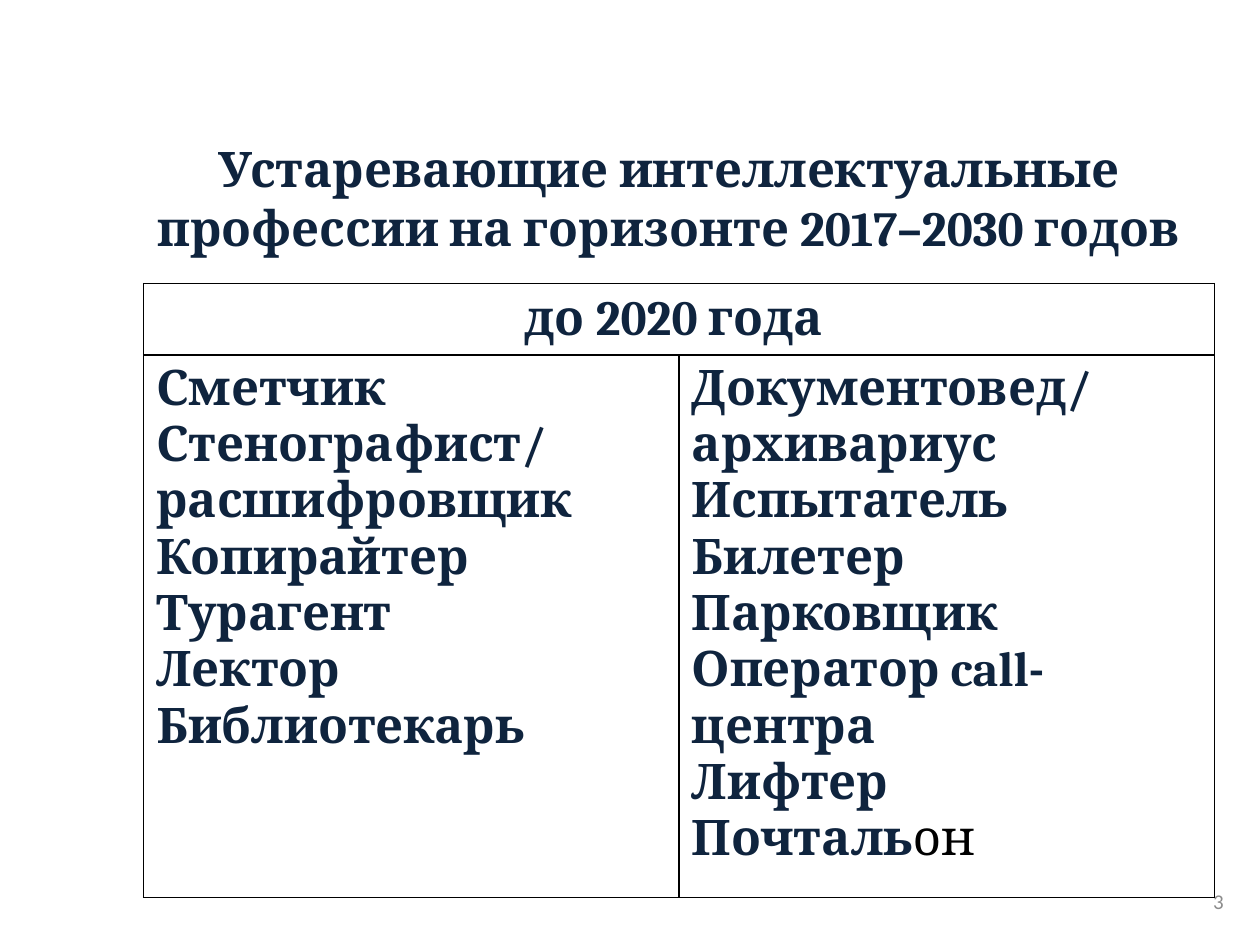
from dataclasses import dataclass

from lxml.etree import SubElement
from pptx import Presentation
from pptx.dml.color import RGBColor
from pptx.enum.text import MSO_ANCHOR, MSO_AUTO_SIZE, PP_ALIGN
from pptx.oxml.ns import qn
from pptx.util import Inches, Pt


@dataclass(frozen=True)
class Theme:
    """Colours, fonts and type sizes of the deck."""
    navy: str = "0F243E"
    black: str = "000000"
    grey: str = "8C8C8C"
    serif: str = "Cambria"
    sans: str = "Calibri"
    body_size: float = 28
    number_size: float = 12
    border: float = 1
    outline: float = 0.75


class SlideBuilder:
    """Holds the theme and the current slide."""

    def __init__(self, deck, theme):
        """Start a title-only slide."""
        self.deck = deck
        self.theme = theme
        self.slide = deck.slides.add_slide(deck.slide_layouts[5])

    def place(self, left, top, width, height):
        """Turn shares of the slide's size into lengths."""
        across, down = self.deck.slide_width, self.deck.slide_height
        return (int(left * across), int(top * down),
                int(width * across), int(height * down))

    def line(self, parent, tag, width, color):
        """Build a solid line element."""
        line = SubElement(parent, qn(tag), w=str(Pt(width)))
        fill = SubElement(line, qn("a:solidFill"))
        SubElement(fill, qn("a:srgbClr"), val=color)
        return line

    def span(self, para, text, color=None, bold=True, font=None, size=None):
        """Add one formatted run."""
        span = para.add_run()
        span.text = text
        span.font.name = font or self.theme.serif
        span.font.size = Pt(size or self.theme.body_size)
        span.font.bold = bold
        span.font.color.rgb = RGBColor.from_string(color or self.theme.navy)
        return span

    def outlined_span(self, para, text):
        """Add a regular black run with a navy outline."""
        span = self.span(para, text, self.theme.black, bold=False)
        properties = span.font._element
        outline = self.line(properties, "a:ln", self.theme.outline, self.theme.navy)
        properties.insert(0, outline)

    def title(self, text, *area):
        """Move and fill the title placeholder."""
        box = self.slide.shapes.title
        box.left, box.top, box.width, box.height = self.place(*area)
        frame = box.text_frame
        frame.word_wrap = True
        frame.auto_size = MSO_AUTO_SIZE.SHAPE_TO_FIT_TEXT
        frame.vertical_anchor = MSO_ANCHOR.TOP
        para = frame.paragraphs[0]
        para.alignment = PP_ALIGN.CENTER
        self.span(para, text)

    def page_number(self, text, *area):
        """Add the page number."""
        frame = self.slide.shapes.add_textbox(*self.place(*area)).text_frame
        frame.word_wrap = True
        frame.vertical_anchor = MSO_ANCHOR.MIDDLE
        para = frame.paragraphs[0]
        para.alignment = PP_ALIGN.RIGHT
        self.span(para, text, self.theme.grey, False,
                  self.theme.sans, self.theme.number_size)

    def style_cell(self, cell):
        """Clear the fill and draw all four borders."""
        cell.fill.background()
        properties = cell._tc.get_or_add_tcPr()
        for index, side in enumerate("LRTB"):
            border = self.line(properties, f"a:ln{side}",
                               self.theme.border, self.theme.black)
            properties.insert(index, border)

    def professions(self, heading, columns, row_shares, *area):
        """Add a table with a merged heading above lists of professions."""
        frame = self.slide.shapes.add_table(
            2, len(columns), *self.place(*area))
        table = frame.table
        table.first_row = table.horz_banding = False
        for row, share in zip(table.rows, row_shares):
            row.height = int(share * self.deck.slide_height)
        for cell in table.iter_cells():
            self.style_cell(cell)
        top = table.cell(0, 0)
        top.merge(table.cell(0, len(columns) - 1))
        top.vertical_anchor = MSO_ANCHOR.MIDDLE
        para = top.text_frame.paragraphs[0]
        para.alignment = PP_ALIGN.CENTER
        self.span(para, heading)
        for index, names in enumerate(columns):
            body = table.cell(1, index).text_frame
            for order, name in enumerate(names):
                para = body.add_paragraph() if order else body.paragraphs[0]
                self.span(para, name)
        return table


def main():
    """Build and save the slide."""
    deck = Presentation()
    deck.slide_width, deck.slide_height = Inches(10), Inches(7.5)
    page = SlideBuilder(deck, Theme())
    page.page_number("3", 0.717, 0.927, 0.264, 0.053)
    page.title("Устаревающие интеллектуальные профессии на горизонте 2017–2030 годов",
               0.106, 0.14, 0.85, 0.139)
    columns = [
        ["Сметчик", "Стенографист/ расшифровщик", "Копирайтер",
         "Турагент", "Лектор", "Библиотекарь"],
        ["Документовед/ архивариус", "Испытатель", "Билетер", "Парковщик",
         "Оператор call-центра", "Лифтер", "Почталь"],
    ]
    table = page.professions("до 2020 года ", columns, (0.075, 0.574),
                             0.114, 0.3, 0.85, 0.649)
    page.outlined_span(table.cell(1, 1).text_frame.paragraphs[-1], "он")
    deck.save("out.pptx")


if __name__ == "__main__":
    main()
